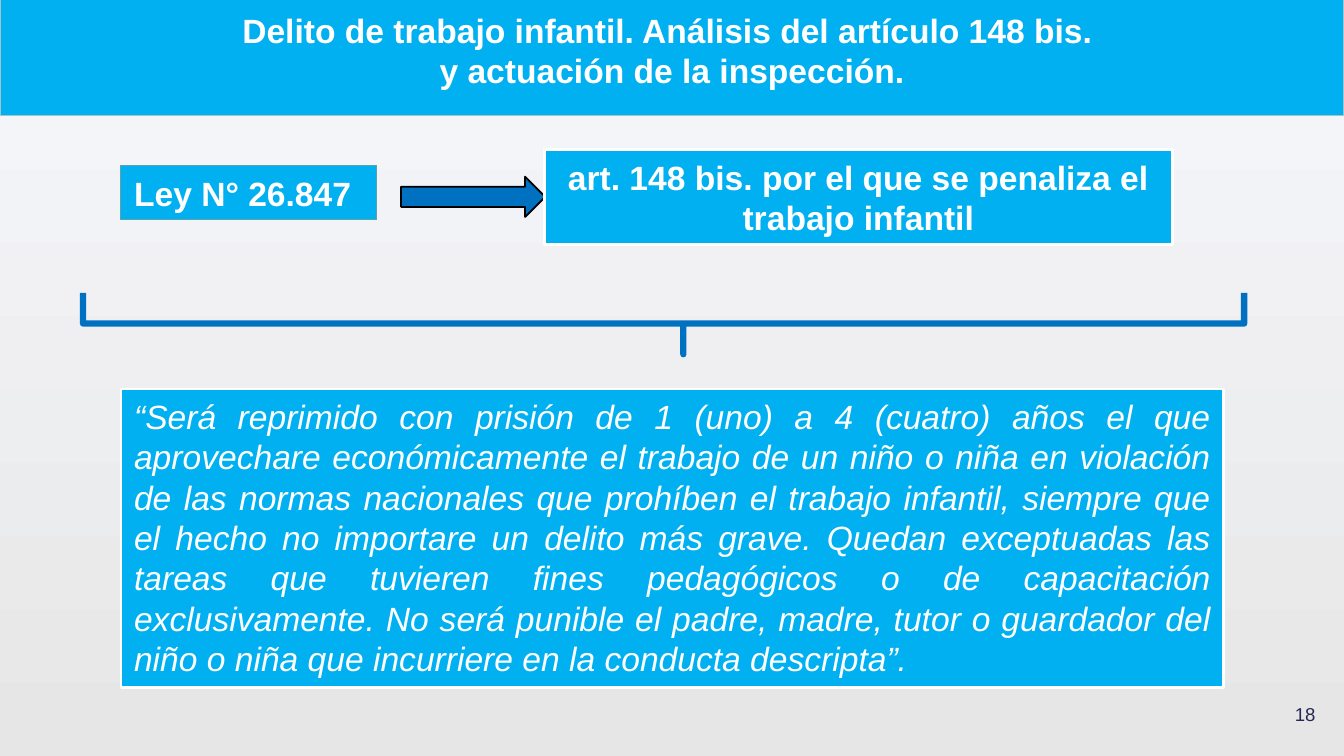
from pptx import Presentation
from pptx.dml.color import RGBColor
from pptx.enum.shapes import MSO_SHAPE as Shape
from pptx.enum.text import MSO_ANCHOR as Anchor, MSO_AUTO_SIZE as AutoSize, PP_ALIGN as Align
from pptx.util import Pt

# Content
TITLE = "Delito de trabajo infantil. Análisis del artículo 148 bis. \vy actuación de la inspección."
LAW = "Ley N° 26.847"
ARTICLE = "art. 148 bis. por el que se penaliza el trabajo infantil"
QUOTE = (
    "“Será reprimido con prisión de 1 (uno) a 4 (cuatro) años el que aprovechare "
    "económicamente el trabajo de un niño o niña en violación de las normas nacionales "
    "que prohíben el trabajo infantil, siempre que el hecho no importare un delito más "
    "grave. Quedan exceptuadas las tareas que tuvieren fines pedagógicos o de "
    "capacitación exclusivamente. No será punible el padre, madre, tutor o guardador "
    "del niño o niña que incurriere en la conducta descripta”."
)
PAGE = "18"

# Style and layout, in points
WIDTH, HEIGHT = 960, 540
SKY, BLUE, WHITE, BLACK, NAVY = "00B0F0", "0070C0", "FFFFFF", "000000", "242852"
BACKGROUND = [(0.03, "F6F7FB"), (1, "E6E6E6")]
LEFT = 86.4
BOX_INSETS, PLAIN_INSETS = (9.4, 5), (7.2, 7.2)


def color(hex_text):
    return RGBColor.from_string(hex_text)


def add_shape(kind, box, fill=None, line=None, weight=0.75):
    shape = slide.shapes.add_shape(kind, *map(Pt, box))
    shape.shadow.inherit = False
    if fill:
        shape.fill.solid()
        shape.fill.fore_color.rgb = color(fill)
    else:
        shape.fill.background()
    if line:
        shape.line.color.rgb = color(line)
        shape.line.width = Pt(weight)
    else:
        shape.line.fill.background()
    return shape


def write(shape, text, size=24, ink=WHITE, bold=False, italic=False, align=Align.LEFT,
          anchor=Anchor.TOP, insets=BOX_INSETS, wrap=True, grow=True):
    frame = shape.text_frame
    frame.text = text
    frame.word_wrap = wrap
    frame.auto_size = AutoSize.SHAPE_TO_FIT_TEXT if grow else AutoSize.NONE
    frame.vertical_anchor = anchor
    frame.margin_left = frame.margin_right = Pt(insets[0])
    frame.margin_top = frame.margin_bottom = Pt(insets[1])
    paragraph = frame.paragraphs[0]
    paragraph.alignment = align
    for run in paragraph.runs:
        font = run.font
        font.name, font.size, font.bold, font.italic = "Arial", Pt(size), bold, italic
        font.color.rgb = color(ink)


prs = Presentation()
prs.slide_width, prs.slide_height = Pt(WIDTH), Pt(HEIGHT)
slide = prs.slides.add_slide(prs.slide_layouts[6])

# Background fading downwards
backdrop = slide.background.fill
backdrop.gradient()
backdrop.gradient_angle = 270
for stop, (position, tint) in zip(backdrop.gradient_stops, BACKGROUND):
    stop.position = position
    stop.color.rgb = color(tint)

# Title band and page number
title = add_shape(Shape.RECTANGLE, (0, 0, WIDTH, 82.5), SKY, "9CC7CE")
write(title, TITLE, bold=True, align=Align.CENTER, insets=PLAIN_INSETS, grow=False)
page = slide.shapes.add_textbox(Pt(889.2), Pt(489.6), Pt(57.6), Pt(41))
write(page, PAGE, size=13.3, ink=NAVY, align=Align.RIGHT, anchor=Anchor.MIDDLE,
      insets=PLAIN_INSETS, grow=False)

# Law, arrow and article
law = add_shape(Shape.RECTANGLE, (LEFT, 118.2, 182.9, 38.9), SKY, "5AA2AE")
write(law, LAW, bold=True, wrap=False)
add_shape(Shape.RIGHT_ARROW, (286.5, 126.2, 103, 28.8), BLUE, BLACK, 1.25)
article = add_shape(Shape.RECTANGLE, (388.8, 106.8, 448.6, 67.7), SKY, WHITE, 2)
write(article, ARTICLE, bold=True, align=Align.CENTER)

# Quoted article text
quote = add_shape(Shape.RECTANGLE, (LEFT, 277.9, 787.7, 213.1), SKY, WHITE, 2)
write(quote, QUOTE, italic=True, align=Align.JUSTIFY)

# Square brace turned to point down at the quote
brace_x, brace_y, depth, span = 474, 231.1, 43.9, 829.4
brace = add_shape(Shape.RIGHT_BRACE,
                  (brace_x - depth / 2, brace_y - span / 2, depth, span), line=BLUE, weight=4.5)
brace.adjustments[0], brace.adjustments[1] = 0, 0.483
brace.rotation = 90

prs.save("out.pptx")
